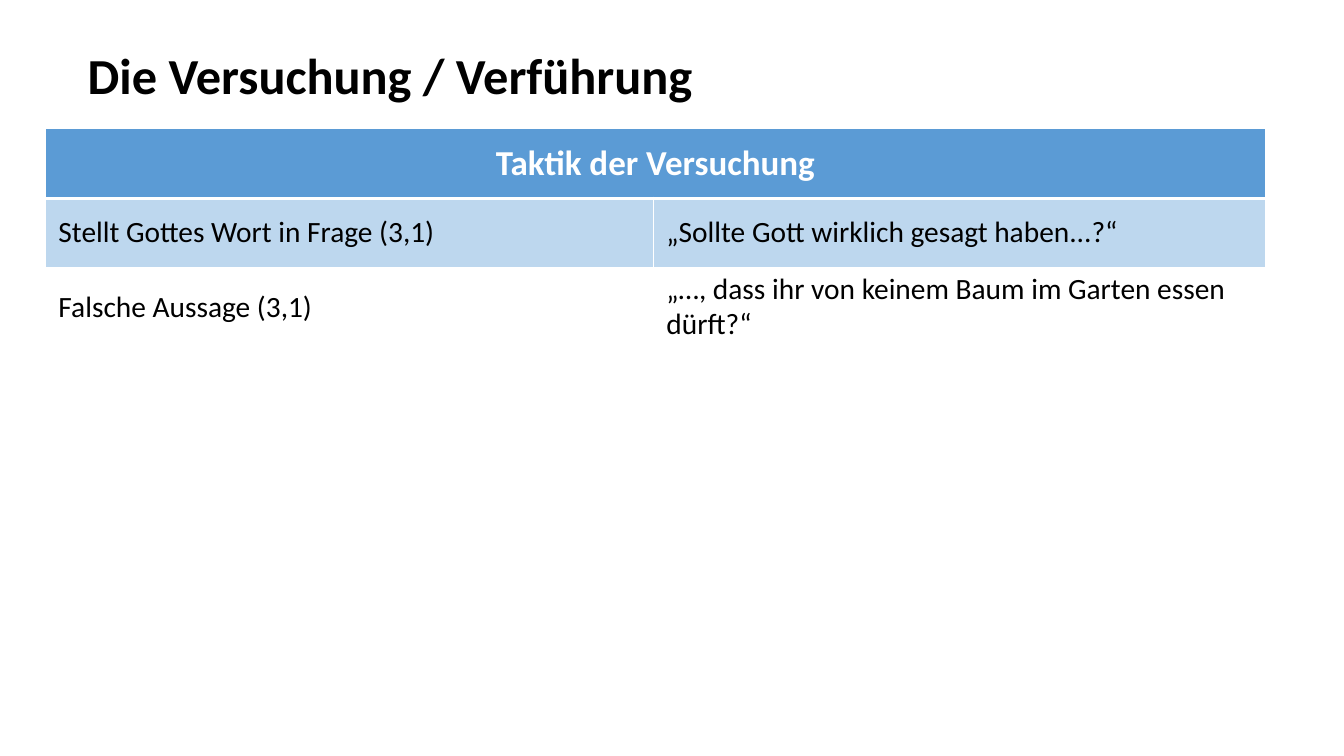
from dataclasses import dataclass

from lxml.etree import SubElement
from pptx import Presentation
from pptx.dml.color import RGBColor
from pptx.enum.text import MSO_ANCHOR, PP_ALIGN
from pptx.oxml.ns import qn
from pptx.util import Inches, Pt


@dataclass(frozen=True)
class Theme:
    font: str = "Calibri"
    black: str = "000000"
    white: str = "FFFFFF"
    header: str = "5B9BD5"
    band: str = "BDD7EE"
    title_size: int = 36
    header_size: int = 25
    body_size: int = 21


THEME = Theme()
HEADING = "Taktik der Versuchung"
TACTICS = [
    ("Stellt Gottes Wort in Frage (3,1)", "„Sollte Gott wirklich gesagt haben...?“"),
    ("Falsche Aussage (3,1)", "„…, dass ihr von keinem Baum im Garten essen dürft?“"),
]


def set_attrs(obj, **values):
    for name, value in values.items():
        setattr(obj, name, value)


def write(p, text, size, color, bold=False, align=PP_ALIGN.LEFT):
    p.alignment = align
    r = p.add_run()
    r.text = text
    set_attrs(r.font, name=THEME.font, size=Pt(size), bold=bold)
    r.font.color.rgb = RGBColor.from_string(color)


def add_title(slide, left, top, width, height, text):
    sp = slide.shapes.title
    set_attrs(sp, left=Inches(left), top=Inches(top),
              width=Inches(width), height=Inches(height))
    tf = sp.text_frame
    set_attrs(tf, word_wrap=False, vertical_anchor=MSO_ANCHOR.MIDDLE)
    write(tf.paragraphs[0], text, THEME.title_size, THEME.black, bold=True)


def format_cell(cell, fill, bottom=1):
    """Set margins, white borders (bottom width in points) and fill."""
    set_attrs(cell, vertical_anchor=MSO_ANCHOR.MIDDLE,
              margin_left=Inches(0.13), margin_right=Inches(0.13),
              margin_top=0, margin_bottom=0)
    tc_pr = cell._tc.get_or_add_tcPr()
    for side, width in (("L", 1), ("R", 1), ("T", 1), ("B", bottom)):
        ln = SubElement(tc_pr, qn(f"a:ln{side}"), w=str(Pt(width)))
        SubElement(SubElement(ln, qn("a:solidFill")), qn("a:srgbClr"), val=THEME.white)
    cell.fill.solid()
    cell.fill.fore_color.rgb = RGBColor.from_string(fill)


def add_tactics_table(slide, left, top, col_widths, row_heights):
    table = slide.shapes.add_table(
        len(row_heights), len(col_widths), Inches(left), Inches(top),
        Inches(sum(col_widths)), Inches(sum(row_heights))).table
    for col, width in zip(table.columns, col_widths):
        col.width = Inches(width)
    for row, height in zip(table.rows, row_heights):
        row.height = Inches(height)

    header = table.cell(0, 0)
    header.merge(table.cell(0, len(col_widths) - 1))
    for cell in table.rows[0].cells:
        format_cell(cell, THEME.header, bottom=3)
    write(header.text_frame.paragraphs[0], HEADING, THEME.header_size,
          THEME.white, bold=True, align=PP_ALIGN.CENTER)

    for i, texts in enumerate(TACTICS, start=1):
        fill = THEME.band if i % 2 else THEME.white
        for cell, text in zip(table.rows[i].cells, texts):
            format_cell(cell, fill, bottom=1)
            write(cell.text_frame.paragraphs[0], text, THEME.body_size, THEME.black)


def main():
    prs = Presentation()
    set_attrs(prs, slide_width=Inches(13.33), slide_height=Inches(7.5))
    slide = prs.slides.add_slide(prs.slide_layouts.get_by_name("Title Only"))
    add_title(slide, 0.77, 0.38, 6.27, 0.71, "Die Versuchung / Verführung")
    add_tactics_table(slide, 0.45, 1.27, (6.03, 6.07), (0.7, 0.68, 0.79))
    prs.save("out.pptx")


if __name__ == "__main__":
    main()
